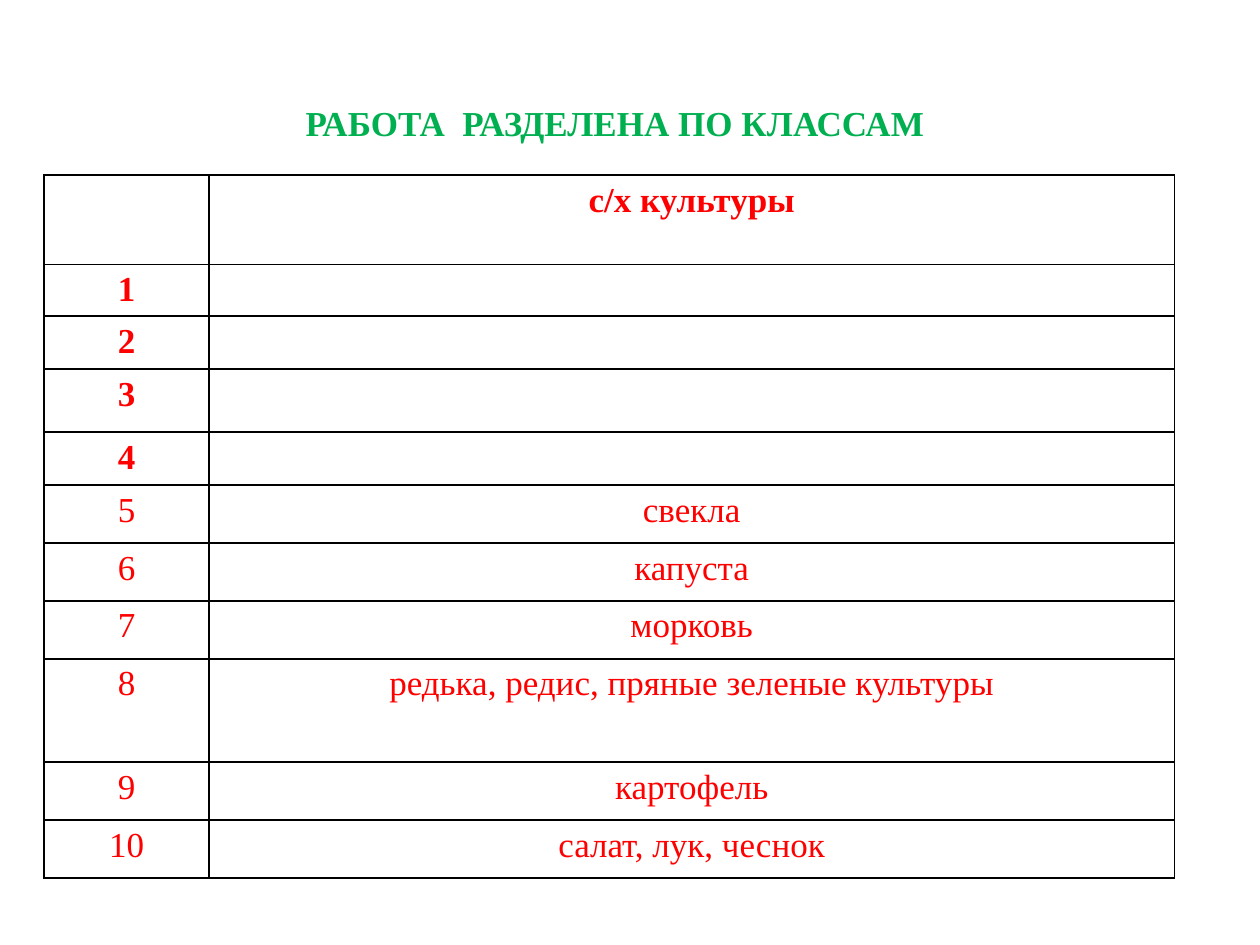
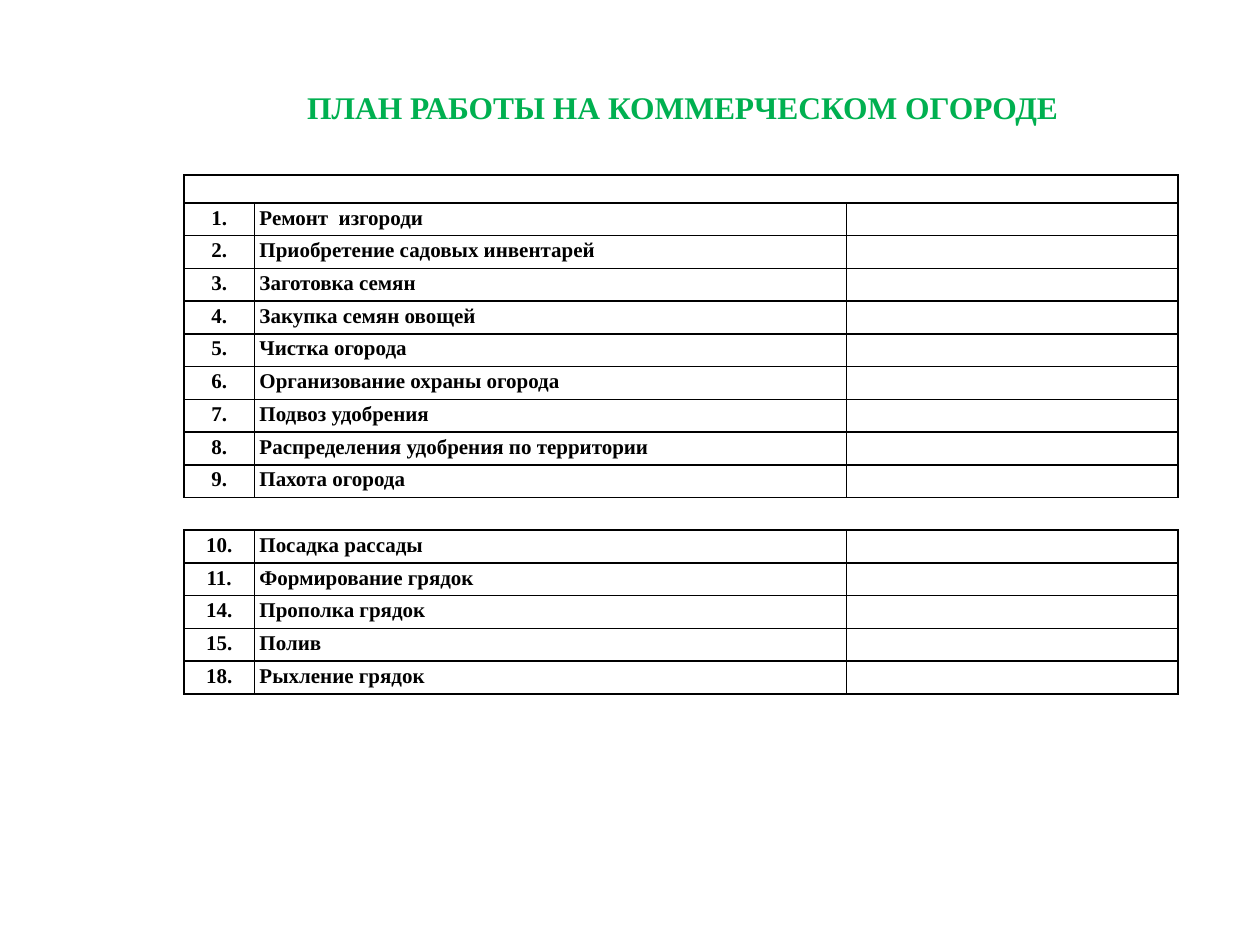
from lxml import etree
from pptx import Presentation
from pptx import util as u
from pptx.dml.color import RGBColor
from pptx.enum import text
from pptx.oxml import ns

COLOURS = {"title": "00B050", "grade": "FF0000", "plan": "000000", "border": "000000"}
FONT = "Times New Roman"
CENTRE, LEFT = text.PP_ALIGN.CENTER, text.PP_ALIGN.LEFT
TABLE_TOP = 1.39

presentation = Presentation()
presentation.slide_width, presentation.slide_height = u.Inches(10), u.Inches(7.5)
blank_layout = presentation.slide_layouts[6]


def write(paragraph, wording, colour, size, bold, align):
    """Put one formatted run in the paragraph, or only a text size if there is no wording."""
    paragraph.alignment = align
    if not wording:
        etree.SubElement(paragraph._p, ns.qn("a:endParaRPr"), sz=str(size * 100))
        return
    run = paragraph.add_run()
    run.text = wording
    font_format = {"name": FONT, "size": u.Pt(size), "bold": bold}
    for name, value in font_format.items():
        setattr(run.font, name, value)
    run.font.color.rgb = RGBColor.from_string(COLOURS[colour])


def style_cell(cell, margin, open_sides=False):
    """Clear the fill, draw black borders and set the margins; open_sides drops left and right."""
    properties = cell._tc.get_or_add_tcPr()
    for side in ("lnL", "lnR", "lnT", "lnB"):
        line = etree.SubElement(properties, ns.qn(f"a:{side}"), w=str(u.Pt(1)))
        if open_sides and side in ("lnL", "lnR"):
            etree.SubElement(line, ns.qn("a:noFill"))
        else:
            fill = etree.SubElement(line, ns.qn("a:solidFill"))
            etree.SubElement(fill, ns.qn("a:srgbClr"), val=COLOURS["border"])
    cell.fill.background()
    margins = {"margin_left": margin, "margin_right": margin, "margin_top": 0, "margin_bottom": 0}
    for name, value in margins.items():
        setattr(cell, name, u.Inches(value))


grade_rows = [
    ("", "с/х культуры"),
    ("1", ""),
    ("2", ""),
    ("3", ""),
    ("4", ""),
    ("5", "свекла"),
    ("6", "капуста"),
    ("7", "морковь"),
    ("8", "редька, редис, пряные зеленые культуры"),
    ("9", "картофель"),
    ("10", "салат, лук, чеснок"),
]
plan_rows = [
    (),
    ("1.", "Ремонт  изгороди", ""),
    ("2.", "Приобретение садовых инвентарей", ""),
    ("3.", "Заготовка семян", ""),
    ("4.", "Закупка семян овощей", ""),
    ("5.", "Чистка огорода", ""),
    ("6.", "Организование охраны огорода", ""),
    ("7.", "Подвоз удобрения", ""),
    ("8.", "Распределения удобрения по территории", ""),
    ("9.", "Пахота огорода", ""),
    (),
    ("10.", "Посадка рассады", ""),
    ("11.", "Формирование грядок", ""),
    ("14.", "Прополка грядок", ""),
    ("15.", "Полив", ""),
    ("18.", "Рыхление грядок", ""),
]

# An empty row is merged across the table; every one after the first is a gap without sides.
pages = [
    {
        "title": "РАБОТА  РАЗДЕЛЕНА ПО КЛАССАМ", "title_size": 20,
        "title_box": (1.88, 0.76, 6, 0.42),
        "rows": grade_rows, "left": 0.35, "widths": [1.31, 7.66],
        "heights": [0.71, 0.41, 0.42, 0.5, 0.42, 0.46, 0.46, 0.46, 0.82, 0.46, 0.46],
        "aligns": [CENTRE, CENTRE], "colour": "grade", "size": 20,
        "bold_rows": 5, "margin": 0.07,
    },
    {
        "title": "ПЛАН РАБОТЫ НА КОММЕРЧЕСКОМ ОГОРОДЕ", "title_size": 18,
        "title_box": (1.92, 0.65, 7, 0.4),
        "rows": plan_rows, "left": 1.46, "widths": [0.56, 4.7, 2.63],
        "heights": [0.22] + [0.26] * (len(plan_rows) - 1),
        "aligns": [CENTRE, LEFT, LEFT], "colour": "plan", "size": 12,
        "bold_rows": len(plan_rows), "margin": 0.04,
    },
]

for page in pages:
    slide = presentation.slides.add_slide(blank_layout)
    widths, heights, rows = page["widths"], page["heights"], page["rows"]

    table = slide.shapes.add_table(
        len(rows), len(widths), u.Inches(page["left"]), u.Inches(TABLE_TOP),
        u.Inches(sum(widths)), u.Inches(sum(heights))).table
    table.first_row = table.horz_banding = False
    for column, width in zip(table.columns, widths):
        column.width = u.Inches(width)

    for row_index, (wordings, height) in enumerate(zip(rows, heights)):
        table.rows[row_index].height = u.Inches(height)
        is_gap = not wordings and row_index > 0
        for column_index, align in enumerate(page["aligns"]):
            cell = table.cell(row_index, column_index)
            style_cell(cell, page["margin"], is_gap)
            paragraph = cell.text_frame.paragraphs[0]
            paragraph.line_spacing = 1.15
            wording = wordings[column_index] if wordings else ""
            write(paragraph, wording, page["colour"], page["size"],
                  row_index < page["bold_rows"], align)
        if not wordings:
            table.cell(row_index, 0).merge(table.cell(row_index, len(widths) - 1))

    title = slide.shapes.add_textbox(*map(u.Inches, page["title_box"])).text_frame
    title.word_wrap = True
    title.vertical_anchor = text.MSO_ANCHOR.MIDDLE
    write(title.paragraphs[0], page["title"], "title", page["title_size"], True, CENTRE)

presentation.save("out.pptx")
